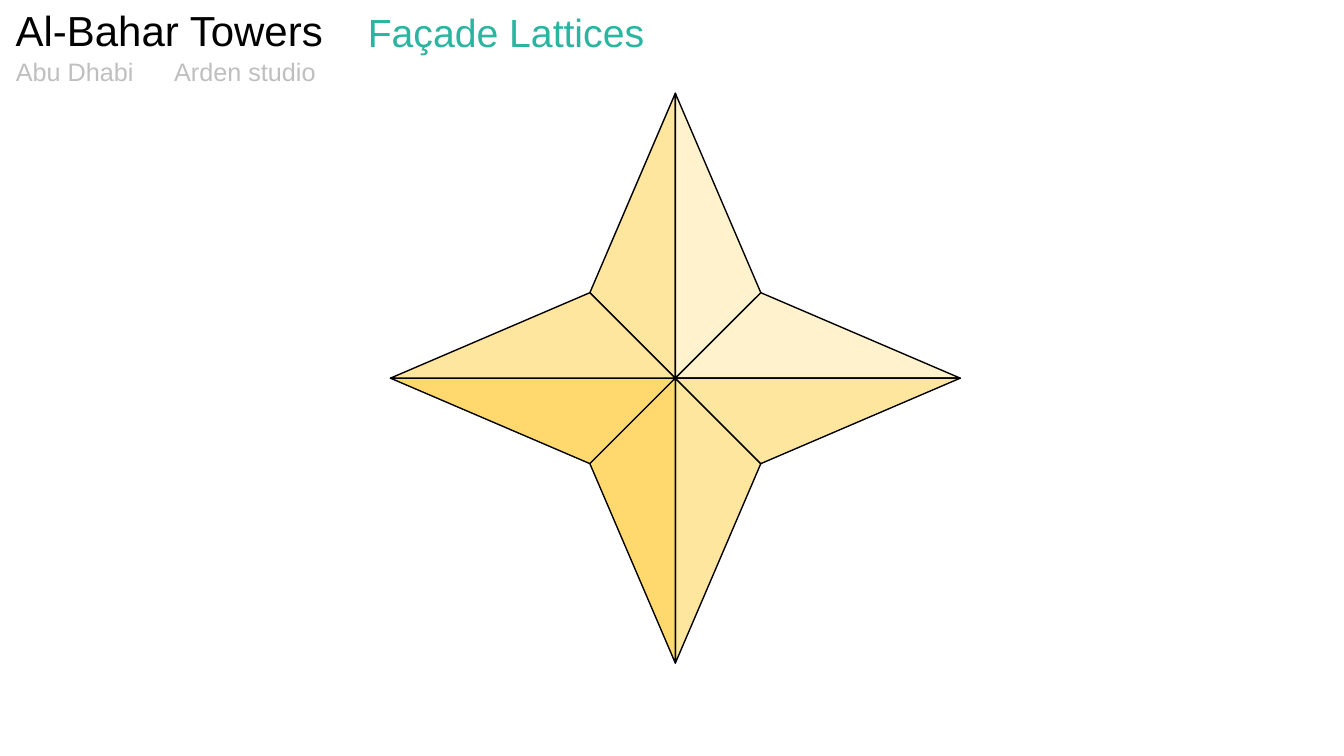
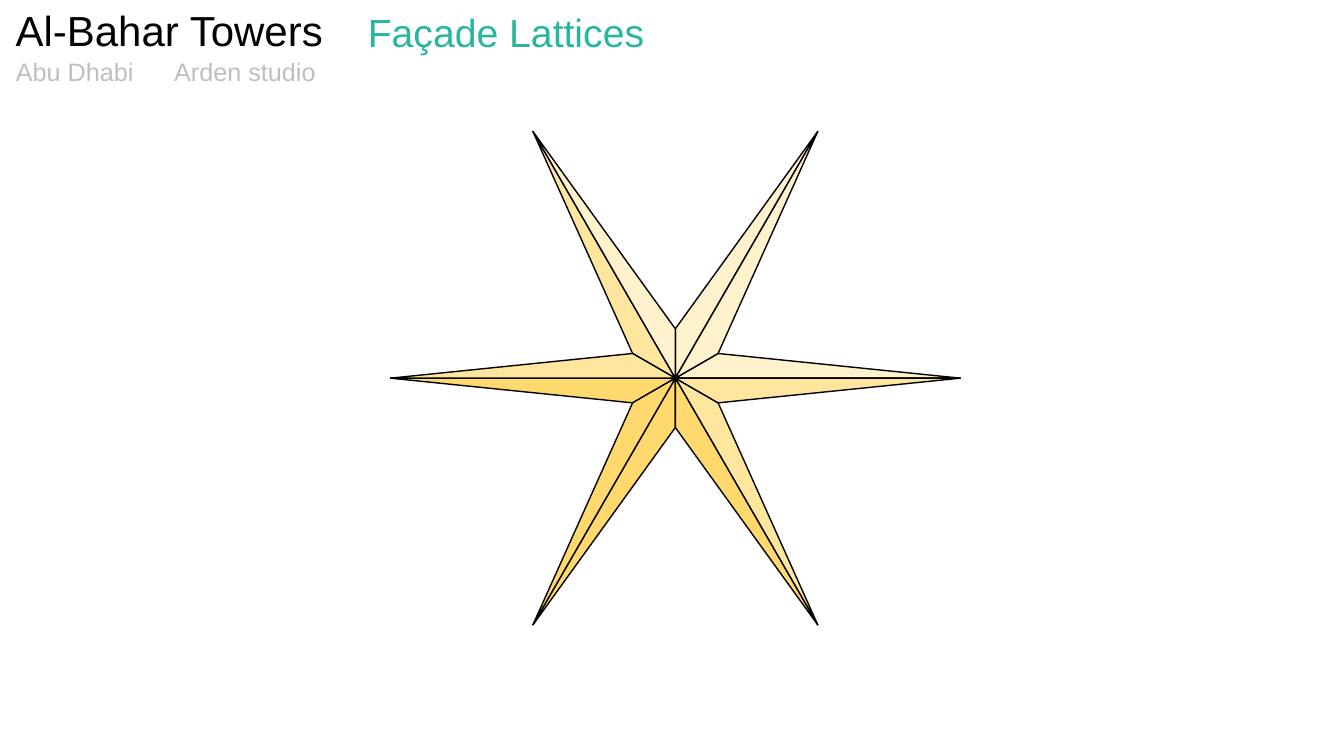
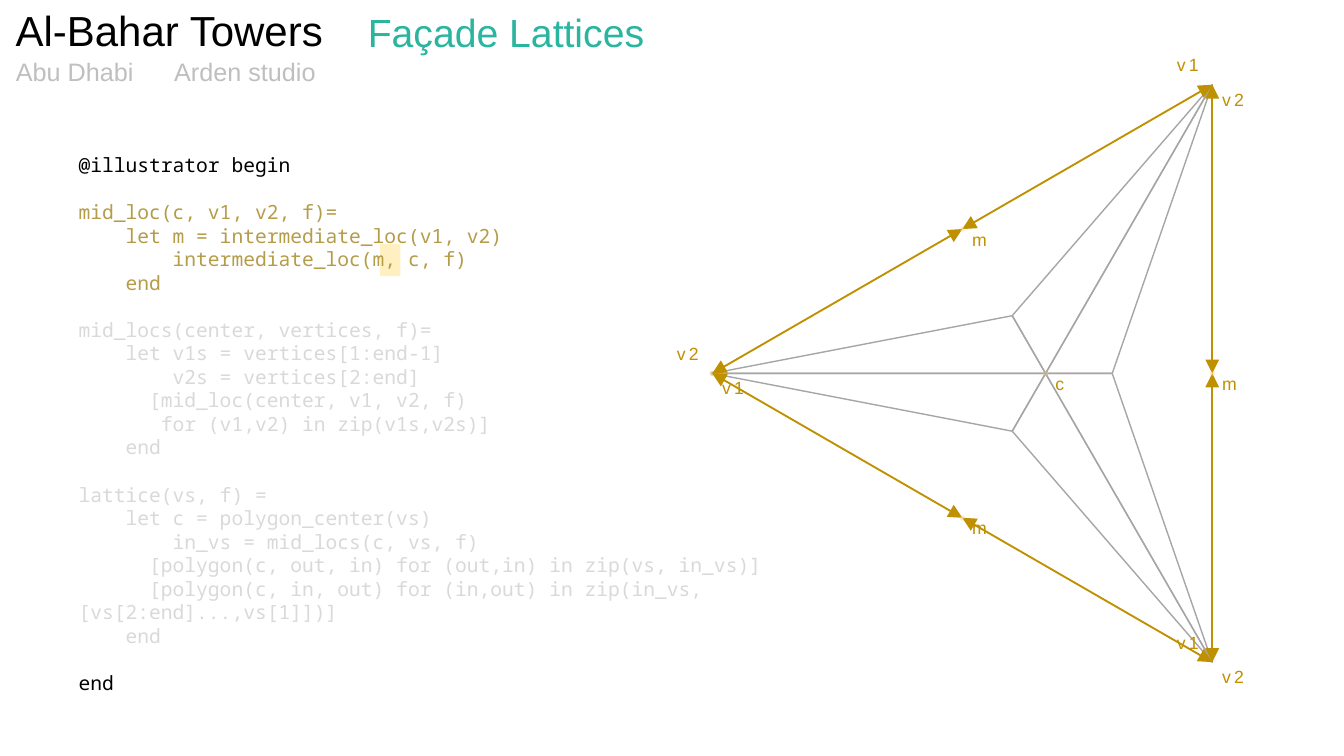
import math
from dataclasses import dataclass

from lxml import etree
from pptx import Presentation
from pptx import util as u
from pptx.dml.color import RGBColor
from pptx.enum import shapes, text
from pptx.oxml.ns import qn
from pptx.util import Cm


@dataclass(frozen=True)
class Theme:
    sans: str = "Arial"
    mono: str = "Noto Sans Mono"
    ink: str = "000000"
    teal: str = "29B59F"
    soft: str = "BFBFBF"
    faded: str = "D9D9D9"
    olive: str = "B59C48"
    gold: str = "BF9000"
    amber: str = "FFC564"
    marker: str = "FFD966"
    mesh: str = "A6A6A6"
    light: str = "FFF2CC"
    middle: str = "FFE69F"
    dark: str = "FFD96D"
    title: float = 30
    topic: float = 28
    caption: float = 18
    code: float = 14
    label: float = 12.6
    code_pitch: float = 16.8


T = Theme()

# Content: lengths in cm
HEADER = [  # wording, box, size, colour, alignment
    ("Façade Lattices", (9.02, 0.08, 9.45, 1.45), T.topic, T.teal, "LEFT"),
    ("Al-Bahar Towers", (0.03, 0, 8.36, 1.55), T.title, T.ink, "RIGHT"),
    ("Arden studio", (4.14, 1.3, 5.44, 1.02), T.caption, T.soft, "LEFT"),
    ("Abu Dhabi", (0.15, 1.3, 4.01, 1.02), T.caption, T.soft, "LEFT"),
]
STAR_CENTER, STAR_RADIUS = (17.02, 9.53), 7.18
STARS = [  # points, inner factor, facet tones counter-clockwise from the right
    (4, 0.6, [T.light] * 2 + [T.middle] * 2 + [T.dark] * 2 + [T.middle] * 2),
    (6, 0.2, [T.light] * 4 + [T.middle] * 2 + [T.dark] * 4 + [T.middle] * 2),
]
TRIANGLE_CENTER, TRIANGLE_RADIUS, TRIANGLE_FACTOR = (26.35, 9.41), 8.4, 0.4
VERTEX_LABELS = [("v2", "v1"), ("v1", "v2"), ("v2", "v1")]  # below, above
BELOW, ABOVE, BESIDE = (0, -0.03), (-1.14, -0.89), (0, -0.14)
CODE_BOX = (1.73, 3.73, 22, 13.41)
HIGHLIGHT = (9.58, 6.15, 0.51, 0.81)
CODE = [
    (T.ink, ["@illustrator begin"]),
    (T.olive, [
        "mid_loc(c, v1, v2, f)=",
        "    let m = intermediate_loc(v1, v2)",
        "        intermediate_loc(m, c, f)",
        "    end",
    ]),
    (T.faded, [
        "mid_locs(center, vertices, f)=",
        "    let v1s = vertices[1:end-1]",
        "        v2s = vertices[2:end]",
        "      [mid_loc(center, v1, v2, f)",
        "       for (v1,v2) in zip(v1s,v2s)]",
        "    end",
    ]),
    (T.faded, [
        "lattice(vs, f) =",
        "    let c = polygon_center(vs)",
        "        in_vs = mid_locs(c, vs, f)",
        "      [polygon(c, out, in) for (out,in) in zip(vs, in_vs)]",
        "      [polygon(c, in, out) for (in,out) in zip(in_vs, [vs[2:end]...,vs[1]])]",
        "    end",
    ]),
    (T.ink, ["end"]),
]


# Geometry
def ring(center, radius, count, start=0):
    angles = [math.radians(start + 360 * i / count) for i in range(count)]
    return [(center[0] + radius * math.cos(a), center[1] - radius * math.sin(a))
            for a in angles]


def between(a, b, share):
    return tuple(p + (q - p) * share for p, q in zip(a, b))


def midpoints(points):
    return [between(a, b, 0.5) for a, b in zip(points, points[1:] + points[:1])]


def shift(point, offset):
    return point[0] + offset[0], point[1] + offset[1]


# Drawing helpers
def lengths(values):
    return [Cm(v) for v in values]


def style_text(para, size, color, font=T.sans):
    para.font.name = font
    para.font.size = u.Pt(size)
    para.font.color.rgb = RGBColor.from_string(color)


def add_box(page, place):
    box = page.shapes.add_textbox(*lengths(place))
    box.text_frame.word_wrap = True
    return box.text_frame


def add_label(page, wording, point, offset):
    para = add_box(page, (*shift(point, offset), 1.3, 0.79)).paragraphs[0]
    span = para.add_run()
    span.text = wording
    if len(wording) > 1:
        span._r.get_or_add_rPr().set("spc", "230")
    style_text(para, T.label, T.gold)


def add_facet(page, corners, fill, line):
    first, *rest = [lengths(c) for c in corners]
    builder = page.shapes.build_freeform(*first, scale=1.0)
    builder.add_line_segments(rest, close=True)
    facet = builder.convert_to_shape()
    facet.shadow.inherit = False
    if fill:
        facet.fill.solid()
        facet.fill.fore_color.rgb = RGBColor.from_string(fill)
    else:
        facet.fill.background()
    facet.line.color.rgb = RGBColor.from_string(line)
    facet.line.width = u.Pt(1)
    etree.SubElement(facet.line._get_or_add_ln(), qn("a:round"))


def add_lattice(page, center, vertices, factor, tones, line):
    inner = [between(center, m, factor) for m in midpoints(vertices)]
    outline = [p for pair in zip(vertices, inner) for p in pair]
    count = len(outline)
    for i in [*range(0, count, 2), *range(1, count, 2)]:
        add_facet(page, (center, outline[i], outline[(i + 1) % count]), tones[i], line)


def add_tint(page, kind, place, color, alpha):
    tint = page.shapes.add_shape(kind, *lengths(place))
    tint.shadow.inherit = False
    tint.line.fill.background()
    tint.fill.solid()
    tint.fill.fore_color.rgb = RGBColor.from_string(color)
    rgb = tint.fill._xPr.find(".//" + qn("a:srgbClr"))
    etree.SubElement(rgb, qn("a:alpha")).set("val", str(alpha * 1000))


def add_dot(page, point, color):
    size = 0.13
    add_tint(page, shapes.MSO_SHAPE.OVAL,
             (*shift(point, (-size / 2, -size / 2)), size, size), color, 33)


def add_double_arrow(page, start, end):
    arrow = page.shapes.add_connector(
        shapes.MSO_CONNECTOR.STRAIGHT, *lengths((*start, *end)))
    arrow.line.color.rgb = RGBColor.from_string(T.gold)
    arrow.line.width = u.Pt(1.34)
    for tag in ("a:headEnd", "a:tailEnd"):
        tip = etree.SubElement(arrow.line._get_or_add_ln(), qn(tag))
        for key, value in (("type", "triangle"), ("w", "lg"), ("len", "lg")):
            tip.set(key, value)
    etree.SubElement(arrow._element.spPr, qn("a:effectLst"))


def add_header(page):
    for wording, place, size, color, align in HEADER:
        para = add_box(page, place).paragraphs[0]
        para.text = wording
        para.alignment = text.PP_ALIGN[align]
        style_text(para, size, color)


def add_code(page):
    frame = add_box(page, CODE_BOX)
    para = None
    for color, lines in CODE:
        for number, line in enumerate(lines):
            opens_block = para is not None and number == 0
            para = frame.add_paragraph() if para is not None else frame.paragraphs[0]
            para.text = line
            para.line_spacing = u.Pt(T.code_pitch)
            if opens_block:
                para.space_before = u.Pt(T.code_pitch)
            style_text(para, T.code, color, T.mono)


def add_triangle(page):
    center = TRIANGLE_CENTER
    vertices = ring(center, TRIANGLE_RADIUS, 3, start=60)
    add_lattice(page, center, vertices, TRIANGLE_FACTOR, [None] * 6, T.mesh)
    for i, middle in enumerate(midpoints(vertices)):
        for vertex in (vertices[i], vertices[(i + 1) % 3]):
            add_double_arrow(page, vertex, middle)
        add_dot(page, middle, T.amber)
        add_label(page, "m", middle, BESIDE)
    add_dot(page, center, T.amber)
    add_label(page, "c", center, BESIDE)
    add_dot(page, vertices[1], T.gold)
    for vertex, (below, above) in zip(vertices, VERTEX_LABELS):
        add_label(page, below, vertex, BELOW)
        add_label(page, above, vertex, ABOVE)


def main():
    deck = Presentation()
    deck.slide_width, deck.slide_height = Cm(33.87), Cm(19.05)
    blank = deck.slide_layouts[6]

    # Star slides
    for count, factor, tones in STARS:
        page = deck.slides.add_slide(blank)
        vertices = ring(STAR_CENTER, STAR_RADIUS, count)
        add_lattice(page, STAR_CENTER, vertices, factor, tones, T.ink)
        add_header(page)

    # Code slide
    page = deck.slides.add_slide(blank)
    add_header(page)
    add_triangle(page)
    add_tint(page, shapes.MSO_SHAPE.RECTANGLE, HIGHLIGHT, T.marker, 40)
    add_code(page)

    deck.save("out.pptx")


if __name__ == "__main__":
    main()
